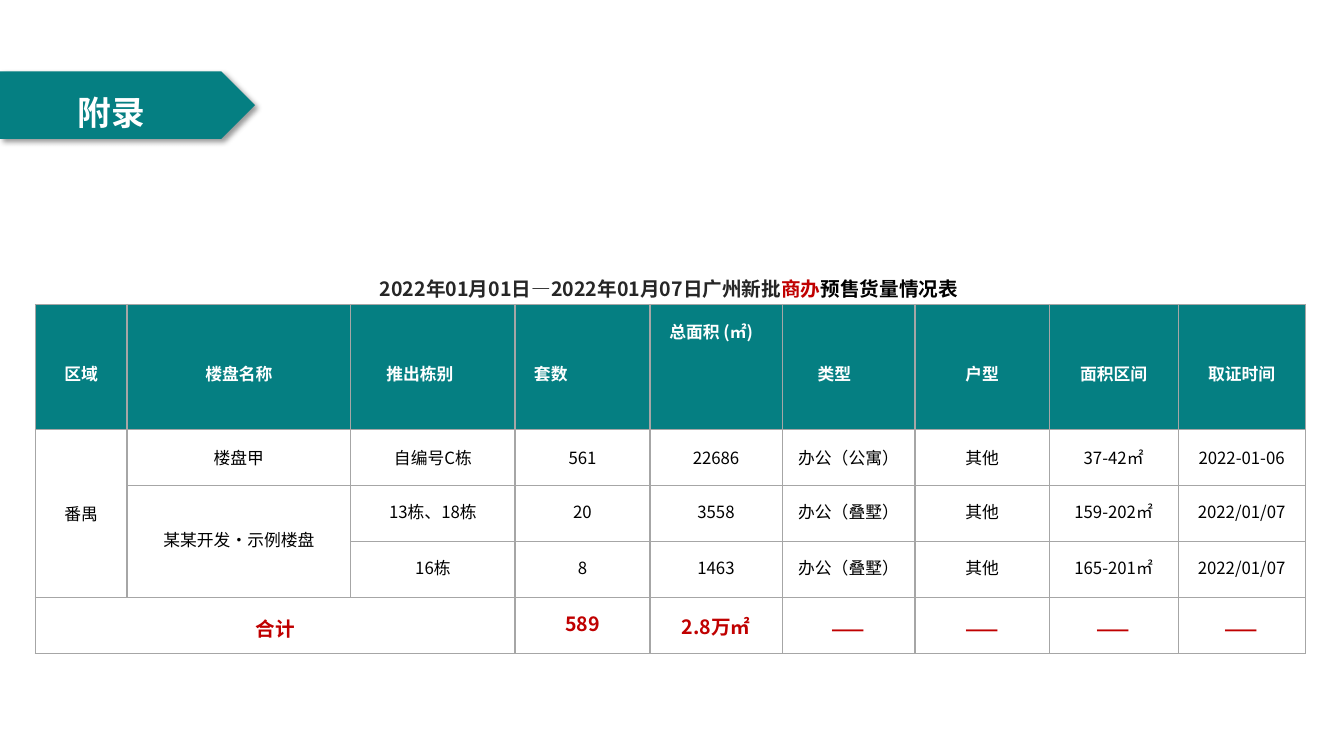
from dataclasses import dataclass, replace

from lxml import etree
from pptx import Presentation
from pptx.dml.color import RGBColor
from pptx.enum.shapes import MSO_SHAPE
from pptx.enum.text import MSO_ANCHOR, MSO_AUTO_SIZE, PP_ALIGN
from pptx.oxml import parse_xml
from pptx.oxml.ns import nsdecls, qn
from pptx.slide import Slide
from pptx.table import Table, _Cell
from pptx.text.text import _Paragraph
from pptx.util import Cm, Pt

CENTER = PP_ALIGN.CENTER
MIDDLE, TOP = MSO_ANCHOR.MIDDLE, MSO_ANCHOR.TOP
NO_AUTOFIT = MSO_AUTO_SIZE.NONE
PENTAGON = MSO_SHAPE.PENTAGON
TITLE_ONLY_LAYOUT = 5


@dataclass(frozen=True)
class Theme:
    font: str = "Noto Sans CJK SC"
    teal: str = "057F82"
    white: str = "FFFFFF"
    black: str = "000000"
    dark: str = "262626"
    red: str = "C00000"
    border: str = "A6A6A6"
    title_size: int = 24
    caption_size: int = 14
    table_size: int = 12
    total_size: int = 14


THEME = Theme()


@dataclass(frozen=True)
class TextStyle:
    size: int
    color: str
    bold: bool
    line_spacing: float = 1.0


@dataclass(frozen=True)
class CellStyle:
    text: TextStyle
    margins: tuple[float, float, float, float]  # left, top, right, bottom in cm
    fill: str = THEME.white
    anchor: MSO_ANCHOR = MIDDLE


@dataclass(frozen=True)
class TableRow:
    height: float
    style: CellStyle
    texts: tuple[str, ...]


# Styles
TITLE = TextStyle(THEME.title_size, THEME.white, True, 1.2)
CAPTION = TextStyle(THEME.caption_size, THEME.dark, True, 1.2)
TOTAL_TEXT = TextStyle(THEME.total_size, THEME.red, True, 1.2)
BODY_TEXT = TextStyle(THEME.table_size, THEME.black, False)
TIGHT = (0.03, 0.03, 0.03, 0.13)

HEADER = CellStyle(TextStyle(THEME.table_size, THEME.white, True, 1.5),
                   (0.25, 0.05, 0.25, 0.05), THEME.teal)
FIRST = CellStyle(BODY_TEXT, (0, 0, 0, 0))
BODY = CellStyle(BODY_TEXT, TIGHT)
TOTAL = CellStyle(TOTAL_TEXT, (0.25, 0.1, 0.25, 0.1))

# Table content
CAPTION_RUNS = (
    ("2022年01月01日—2022年01月07日广州新批", THEME.dark),
    ("商办", THEME.red),
    ("预售货量情况表", THEME.black),
)
COLUMN_WIDTHS = (2.31, 5.64, 4.14, 3.4, 3.33, 3.35, 3.38, 3.25, 3.2)
HEADER_HEIGHT, ROW_HEIGHT = 3.15, 1.41
ROWS = (
    TableRow(HEADER_HEIGHT, HEADER,
             ("区域", "楼盘名称", "推出栋别", "套数", "总面积 (㎡)",
              "类型", "户型", "面积区间", "取证时间")),
    TableRow(ROW_HEIGHT, FIRST,
             ("番禺", "楼盘甲", "自编号C栋", "561", "22686",
              "办公（公寓）", "其他", "37-42㎡", "2022-01-06")),
    TableRow(ROW_HEIGHT, BODY,
             ("", "某某开发·示例楼盘", "13栋、18栋", "20", "3558",
              "办公（叠墅）", "其他", "159-202㎡", "2022/01/07")),
    TableRow(ROW_HEIGHT, BODY,
             ("", "", "16栋", "8", "1463",
              "办公（叠墅）", "其他", "165-201㎡", "2022/01/07")),
    TableRow(ROW_HEIGHT, TOTAL,
             ("合计", "", "", "589", "2.8万㎡") + ("——",) * 4),
)
MERGES = (((1, 0), (3, 0)), ((2, 1), (3, 1)), ((4, 0), (4, 2)))
SPECIAL_CELLS = {
    (0, 2): replace(HEADER, margins=(0.25, 0.05, 0.91, 0.05)),
    (0, 3): replace(HEADER, margins=(0.25, 0.05, 1.85, 0.05)),
    (0, 4): replace(HEADER, margins=(0.1, 0.05, 0.35, 0.05), anchor=TOP),
    (0, 5): replace(HEADER, margins=(0.25, 0.05, 0.96, 0.05)),
    (4, 3): CellStyle(replace(TOTAL_TEXT, line_spacing=1.0), TIGHT),
    (4, 4): CellStyle(TOTAL_TEXT, TIGHT),
}


def format_paragraph(paragraph: _Paragraph, style: TextStyle) -> None:
    paragraph.alignment = CENTER
    paragraph.line_spacing = style.line_spacing
    font = paragraph.font
    font.size = Pt(style.size)
    font.bold = style.bold
    font.color.rgb = RGBColor.from_string(style.color)
    font.name = THEME.font
    defaults = paragraph._p.pPr.find(qn("a:defRPr"))
    etree.SubElement(defaults, qn("a:ea")).set("typeface", THEME.font)


def add_banner_title(slide: Slide) -> None:
    banner = slide.shapes.add_shape(PENTAGON, Cm(0), Cm(1.8), Cm(6.43), Cm(1.7))
    banner.fill.solid()
    banner.fill.fore_color.rgb = RGBColor.from_string(THEME.teal)
    banner.line.fill.background()
    banner.element.spPr.append(parse_xml(
        f'<a:effectLst {nsdecls("a")}>'
        f'<a:outerShdw blurRad="{Pt(4)}" dist="{Pt(3)}" dir="2700000" algn="tl" rotWithShape="0">'
        f'<a:srgbClr val="{THEME.black}"><a:alpha val="40000"/></a:srgbClr>'
        '</a:outerShdw></a:effectLst>'))

    title = slide.shapes.title
    title.left, title.top, title.width, title.height = Cm(1.42), Cm(2.03), Cm(2.77), Cm(1.4)
    title.element.addprevious(banner.element)
    frame = title.text_frame
    frame.text = "附录"
    frame.word_wrap = False
    frame.auto_size = NO_AUTOFIT
    frame.vertical_anchor = MIDDLE
    format_paragraph(frame.paragraphs[0], TITLE)


def add_caption(slide: Slide) -> None:
    frame = slide.shapes.add_textbox(Cm(1.25), Cm(6.73), Cm(31.22), Cm(0.97)).text_frame
    frame.word_wrap = True
    frame.vertical_anchor = MIDDLE
    paragraph = frame.paragraphs[0]
    format_paragraph(paragraph, CAPTION)
    for text, color in CAPTION_RUNS:
        run = paragraph.add_run()
        run.text = text
        run.font.color.rgb = RGBColor.from_string(color)


def format_cell(cell: _Cell, text: str, style: CellStyle) -> None:
    cell.text = text
    cell.vertical_anchor = style.anchor
    (cell.margin_left, cell.margin_top,
     cell.margin_right, cell.margin_bottom) = map(Cm, style.margins)
    format_paragraph(cell.text_frame.paragraphs[0], style.text)
    # Borders come before the fill in the cell properties
    properties = cell._tc.get_or_add_tcPr()
    for side in ("lnL", "lnR", "lnT", "lnB"):
        properties.append(parse_xml(
            f'<a:{side} {nsdecls("a")} w="{Pt(1)}"><a:solidFill>'
            f'<a:srgbClr val="{THEME.border}"/></a:solidFill></a:{side}>'))
    cell.fill.solid()
    cell.fill.fore_color.rgb = RGBColor.from_string(style.fill)


def add_supply_table(slide: Slide) -> None:
    height = sum(row.height for row in ROWS)
    table: Table = slide.shapes.add_table(
        len(ROWS), len(COLUMN_WIDTHS), Cm(0.89), Cm(7.67),
        Cm(sum(COLUMN_WIDTHS)), Cm(height)).table
    for column, width in zip(table.columns, COLUMN_WIDTHS):
        column.width = Cm(width)
    for row_index, row in enumerate(ROWS):
        table.rows[row_index].height = Cm(row.height)
        for column_index, text in enumerate(row.texts):
            style = SPECIAL_CELLS.get((row_index, column_index), row.style)
            format_cell(table.cell(row_index, column_index), text, style)
    for first, last in MERGES:
        table.cell(*first).merge(table.cell(*last))


def main() -> None:
    presentation = Presentation()
    presentation.slide_width, presentation.slide_height = Cm(33.87), Cm(19.05)
    slide = presentation.slides.add_slide(presentation.slide_layouts[TITLE_ONLY_LAYOUT])
    add_banner_title(slide)
    add_caption(slide)
    add_supply_table(slide)
    presentation.save("out.pptx")


if __name__ == "__main__":
    main()
